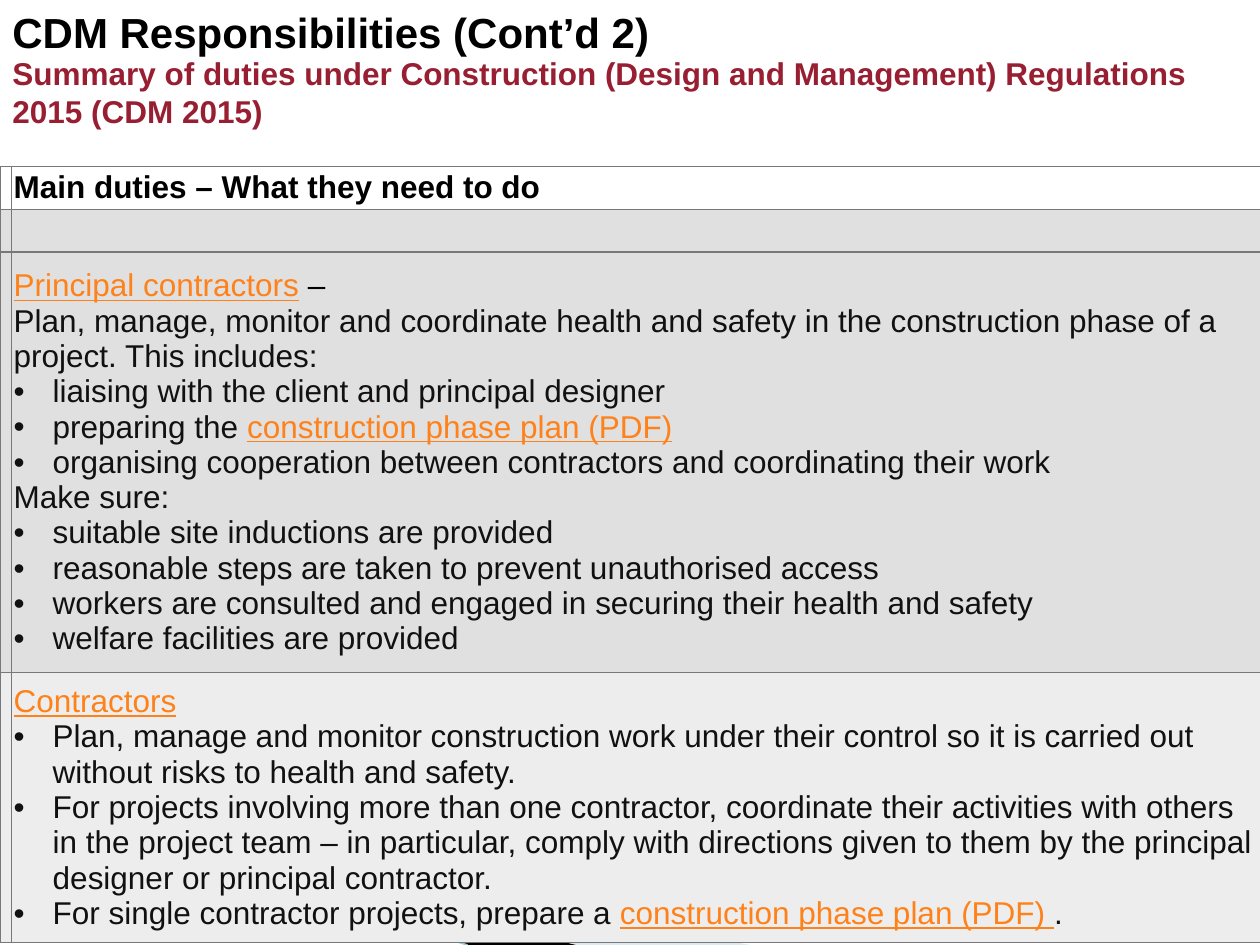
from lxml.etree import SubElement
from pptx import Presentation
from pptx.dml.color import RGBColor
from pptx.enum.text import MSO_ANCHOR
from pptx.oxml.ns import qn
from pptx.util import Emu, Inches, Pt

W, H = 10, 7.5
FONT = "Arial"
BLACK = RGBColor(0x00, 0x00, 0x00)
INK = RGBColor(0x11, 0x11, 0x11)
CRIMSON = RGBColor(0x98, 0x1E, 0x32)
ORANGE = RGBColor(0xFF, 0x81, 0x19)
PALE_BLUE = RGBColor(0xA0, 0xCB, 0xDC)
LINE_BLUE = RGBColor(0x97, 0xC5, 0xD8)
GREY = RGBColor(0xE0, 0xE0, 0xE0)
LIGHT_GREY = RGBColor(0xED, 0xED, 0xED)
BORDER = RGBColor(0x78, 0x78, 0x78)

COLS = [0.08, 9.92]
ROWS = [0.33, 0.33, 3.34, 2.13]
ROW_FILLS = [None, GREY, GREY, LIGHT_GREY]
INDENT = 0.31

# A paragraph is (is_bullet, runs); a run is (text, colour).
HEADER = [(False, [("Main duties – What they need to do", BLACK)])]
PRINCIPAL = [
    (False, [("Principal contractors", ORANGE), (" –", BLACK)]),
    (False, [("Plan, manage, monitor and coordinate health and safety in the "
              "construction phase of a project. This includes:", INK)]),
    (True, [("liaising with the client and principal designer", INK)]),
    (True, [("preparing the ", INK), ("construction phase plan (PDF)", ORANGE)]),
    (True, [("organising cooperation between contractors and coordinating "
             "their work", INK)]),
    (False, [("Make sure:", INK)]),
    (True, [("suitable site inductions are provided", INK)]),
    (True, [("reasonable steps are taken to prevent unauthorised access", INK)]),
    (True, [("workers are consulted and engaged in securing their health and "
             "safety", INK)]),
    (True, [("welfare facilities are provided", INK)]),
]
CONTRACTORS = [
    (False, [("Contractors", ORANGE)]),
    (True, [("Plan, manage and monitor construction work under their control so "
             "it is carried out without risks to health and safety.", INK)]),
    (True, [("For projects involving more than one contractor, coordinate their "
             "activities with others in the project team – in particular, comply "
             "with directions given to them by the principal designer or "
             "principal contractor.", INK)]),
    (True, [("For single contractor projects, prepare a ", INK),
            ("construction phase plan (PDF) ", ORANGE), (".", INK)]),
]


def add_run(p, text, color, size=18, bold=False):
    r = p.add_run()
    r.text = text
    f = r.font
    f.name, f.size, f.bold = FONT, Pt(size), bold
    f.color.rgb = color
    f.underline = color == ORANGE


def add_wedge(s, points, color, alpha=None):
    start, *rest = [(Inches(x), Inches(y)) for x, y in points]
    builder = s.shapes.build_freeform(*start)
    builder.add_line_segments(rest, close=True)
    sp = builder.convert_to_shape()
    sp.shadow.inherit = False
    sp.fill.solid()
    sp.fill.fore_color.rgb = color
    sp.line.fill.background()
    if alpha:
        clr = sp.fill._xPr.find(qn("a:solidFill"))[0]
        SubElement(clr, qn("a:alpha"), val=str(alpha * 1000))


def add_line(s, start, end, color, width):
    ends = [Inches(v) for v in (*start, *end)]
    line = s.shapes.add_connector(1, *ends)
    line.line.color.rgb = color
    line.line.width = Pt(width)
    SubElement(line._element.spPr, qn("a:effectLst"))


def add_heading(s, top, width, height, text, size, color):
    sp = s.shapes.add_textbox(0, Inches(top), Inches(width), Inches(height))
    tf = sp.text_frame
    tf.word_wrap = True
    add_run(tf.paragraphs[0], text, color, size, bold=True)


def set_bullet(p):
    pPr = p._p.get_or_add_pPr()
    pPr.set("marL", str(Inches(INDENT)))
    pPr.set("indent", str(-Inches(INDENT)))
    SubElement(pPr, qn("a:buFont"), typeface=FONT)
    SubElement(pPr, qn("a:buChar"), char="•")


def style_cell(cell, fill):
    """Set margins, thin borders on all sides, and the fill."""
    cell.vertical_anchor = MSO_ANCHOR.MIDDLE
    cell.margin_left = cell.margin_top = cell.margin_bottom = Inches(0.02)
    cell.margin_right = Inches(0.03)
    tcPr = cell._tc.get_or_add_tcPr()
    for side in ("lnL", "lnR", "lnT", "lnB"):
        ln = SubElement(tcPr, qn(f"a:{side}"), w=str(Pt(0.75)))
        solid = SubElement(ln, qn("a:solidFill"))
        SubElement(solid, qn("a:srgbClr"), val=str(BORDER))
    if fill is None:
        cell.fill.background()
    else:
        cell.fill.solid()
        cell.fill.fore_color.rgb = fill


def fill_cell(cell, paragraphs, bold):
    tf = cell.text_frame
    for i, (is_bullet, runs) in enumerate(paragraphs):
        p = tf.add_paragraph() if i else tf.paragraphs[0]
        if is_bullet:
            set_bullet(p)
        for text, color in runs:
            add_run(p, text, color, bold=bold)


def add_duties_table(s, top):
    frame = s.shapes.add_table(len(ROWS), len(COLS), 0, Inches(top),
                               Inches(sum(COLS)), Inches(sum(ROWS)))
    table = frame.table
    table.first_row = table.horz_banding = False
    for col, width in zip(table.columns, COLS):
        col.width = Inches(width)
    contents = [HEADER, [], PRINCIPAL, CONTRACTORS]
    for i, (row, height) in enumerate(zip(table.rows, ROWS)):
        row.height = Inches(height)
        for cell in row.cells:
            style_cell(cell, ROW_FILLS[i])
        fill_cell(row.cells[1], contents[i], bold=i == 0)


def main():
    prs = Presentation()
    prs.slide_width, prs.slide_height = Emu(Inches(W)), Emu(Inches(H))
    s = prs.slides.add_slide(prs.slide_layouts[6])
    add_wedge(s, [(0.55, 6.5), (5.95, H), (4.56, H)], PALE_BLUE, alpha=40)
    add_wedge(s, [(0.53, 6.49), (4.57, H), (3.72, H)], BLACK)
    add_line(s, (0, 6.33), (3.71, H), LINE_BLUE, 0.95)
    add_heading(s, 0, W, 0.81, "CDM Responsibilities (Cont’d 2)", 24, BLACK)
    add_heading(s, 0.38, 9.88, 0.71,
                "Summary of duties under Construction (Design and Management) "
                "Regulations 2015 (CDM 2015)", 18, CRIMSON)
    add_duties_table(s, 1.32)
    prs.save("out.pptx")


if __name__ == "__main__":
    main()
